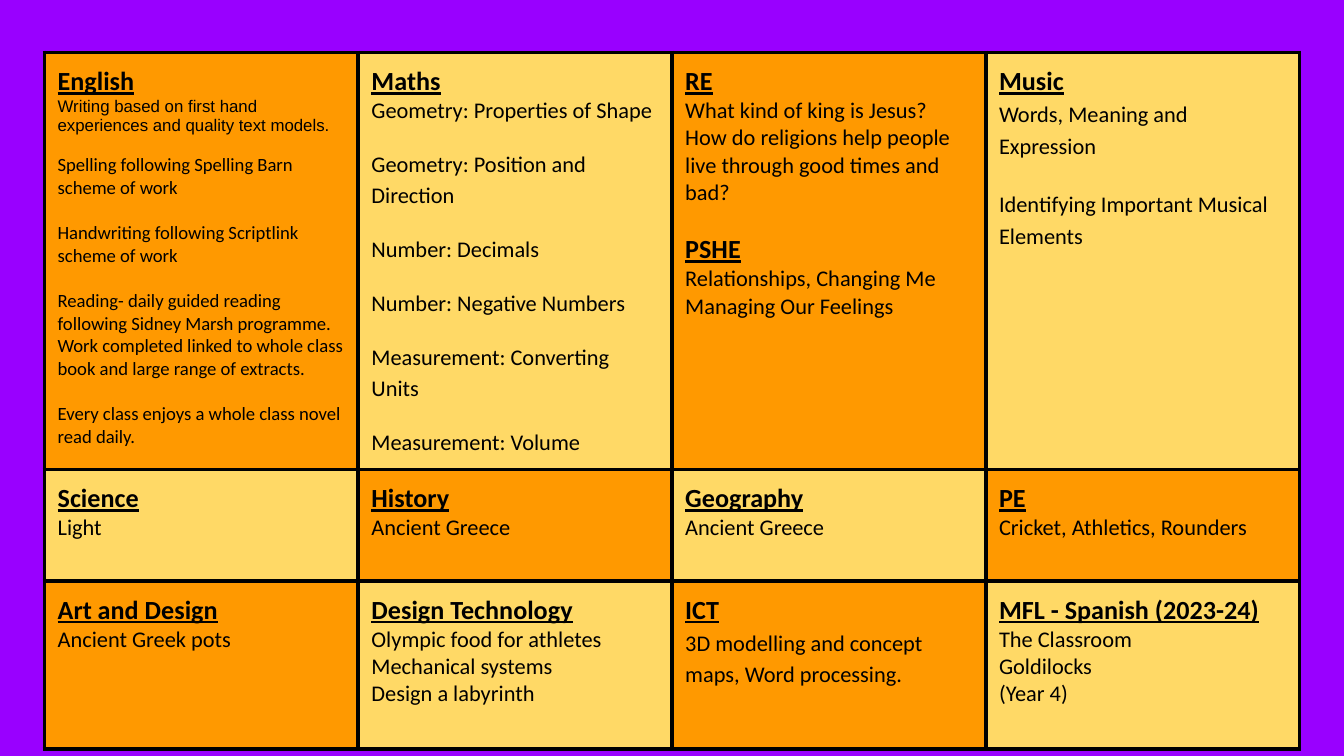
from dataclasses import dataclass

from lxml.etree import SubElement
from pptx import Presentation
from pptx.dml.color import RGBColor as Rgb
from pptx.oxml.ns import qn
from pptx.util import Cm, Pt

COLOURS = {
    "background": "9900FF",
    "orange": "FF9900",
    "yellow": "FFD966",
    "ink": "000000",
}
BORDER = Pt(2.25)
CELL_MARGIN = Cm(0.25)
ROW_HEIGHTS = (Cm(7.88), Cm(2.11), Cm(3.17))


@dataclass
class Line:
    """One paragraph of a subject cell; before is the gap above it in points."""
    text: str
    size: float = 12
    font: str = "Calibri"
    heading: bool = False
    before: float = 0
    spacing: float = 1.0


def heading(text, before=0):
    return Line(text, size=14, heading=True, before=before)


def subject(title, *topics):
    """A heading followed by topics, given as plain strings or as Lines."""
    return [heading(title)] + [t if isinstance(t, Line) else Line(t) for t in topics]


def small(text, before=12.2):
    return Line(text, size=10, before=before)


def loose(text, before=0):
    return Line(text, before=before, spacing=1.15)


CURRICULUM = [
    [
        subject(
            "English",
            Line("Writing based on first hand experiences and quality text models.",
                 size=9, font="Arial"),
            small("Spelling following Spelling Barn scheme of work", before=10),
            small("Handwriting following Scriptlink scheme of work"),
            small("Reading- daily guided reading following Sidney Marsh programme. "
                  "Work completed linked to whole class book and large range of extracts."),
            small("Every class enjoys a whole class novel read daily."),
        ),
        subject(
            "Maths",
            "Geometry: Properties of Shape",
            *(loose(topic, before=12) for topic in (
                "Geometry: Position and Direction",
                "Number: Decimals",
                "Number: Negative Numbers",
                "Measurement: Converting Units",
                "Measurement: Volume",
            )),
        ),
        subject(
            "RE",
            "What kind of king is Jesus?",
            "How do religions help people live through good times and bad?",
            heading("PSHE", before=14.6),
            "Relationships, Changing Me",
            "Managing Our Feelings",
        ),
        subject(
            "Music",
            loose("Words, Meaning and Expression"),
            loose("Identifying Important Musical Elements", before=14.6),
        ),
    ],
    [
        subject("Science", "Light"),
        subject("History", "Ancient Greece"),
        subject("Geography", "Ancient Greece"),
        subject("PE", "Cricket, Athletics, Rounders"),
    ],
    [
        subject("Art and Design", "Ancient Greek pots"),
        subject("Design Technology", "Olympic food for athletes",
                "Mechanical systems", "Design a labyrinth"),
        subject("ICT", loose("3D modelling and concept maps, Word processing.")),
        subject("MFL - Spanish (2023-24)", "The Classroom", "Goldilocks", "(Year 4)"),
    ],
]


def colour(name):
    return Rgb.from_string(COLOURS[name])


def add_borders(cell):
    properties = cell._tc.get_or_add_tcPr()
    for side in ("a:lnL", "a:lnR", "a:lnT", "a:lnB"):
        edge = SubElement(properties, qn(side), w=str(BORDER))
        fill = SubElement(edge, qn("a:solidFill"))
        SubElement(fill, qn("a:srgbClr"), val=COLOURS["ink"])


def write_line(paragraph, line):
    paragraph.line_spacing = line.spacing
    paragraph.space_before = Pt(line.before)
    run = paragraph.add_run()
    run.text = line.text
    font = run.font
    font.name = line.font
    font.size = Pt(line.size)
    font.bold = font.underline = line.heading
    font.color.rgb = colour("ink")


def fill_subject_cell(cell, lines, fill_name):
    cell.margin_left = cell.margin_right = CELL_MARGIN
    cell.margin_top = cell.margin_bottom = CELL_MARGIN
    add_borders(cell)
    cell.fill.solid()
    cell.fill.fore_color.rgb = colour(fill_name)
    frame = cell.text_frame
    for index, line in enumerate(lines):
        write_line(frame.add_paragraph() if index else frame.paragraphs[0], line)


def add_curriculum(slide, left, top, width):
    """Subject grid in a two-colour checkerboard."""
    column_count = len(CURRICULUM[0])
    grid = slide.shapes.add_table(len(CURRICULUM), column_count, left, top,
                                  width, sum(ROW_HEIGHTS)).table
    grid.first_row = grid.horz_banding = False
    for column in grid.columns:
        column.width = width // column_count
    for row, height in zip(grid.rows, ROW_HEIGHTS):
        row.height = height
    for r, subjects in enumerate(CURRICULUM):
        for c, lines in enumerate(subjects):
            fill_name = ("orange", "yellow")[(r + c) % 2]
            fill_subject_cell(grid.cell(r, c), lines, fill_name)


def main():
    deck = Presentation()
    deck.slide_width, deck.slide_height = Cm(25.4), Cm(14.29)
    slide = deck.slides.add_slide(deck.slide_layouts[6])
    slide.background.fill.solid()
    slide.background.fill.fore_color.rgb = colour("background")
    add_curriculum(slide, Cm(0.84), Cm(0.99), Cm(23.72))
    deck.save("out.pptx")


if __name__ == "__main__":
    main()
